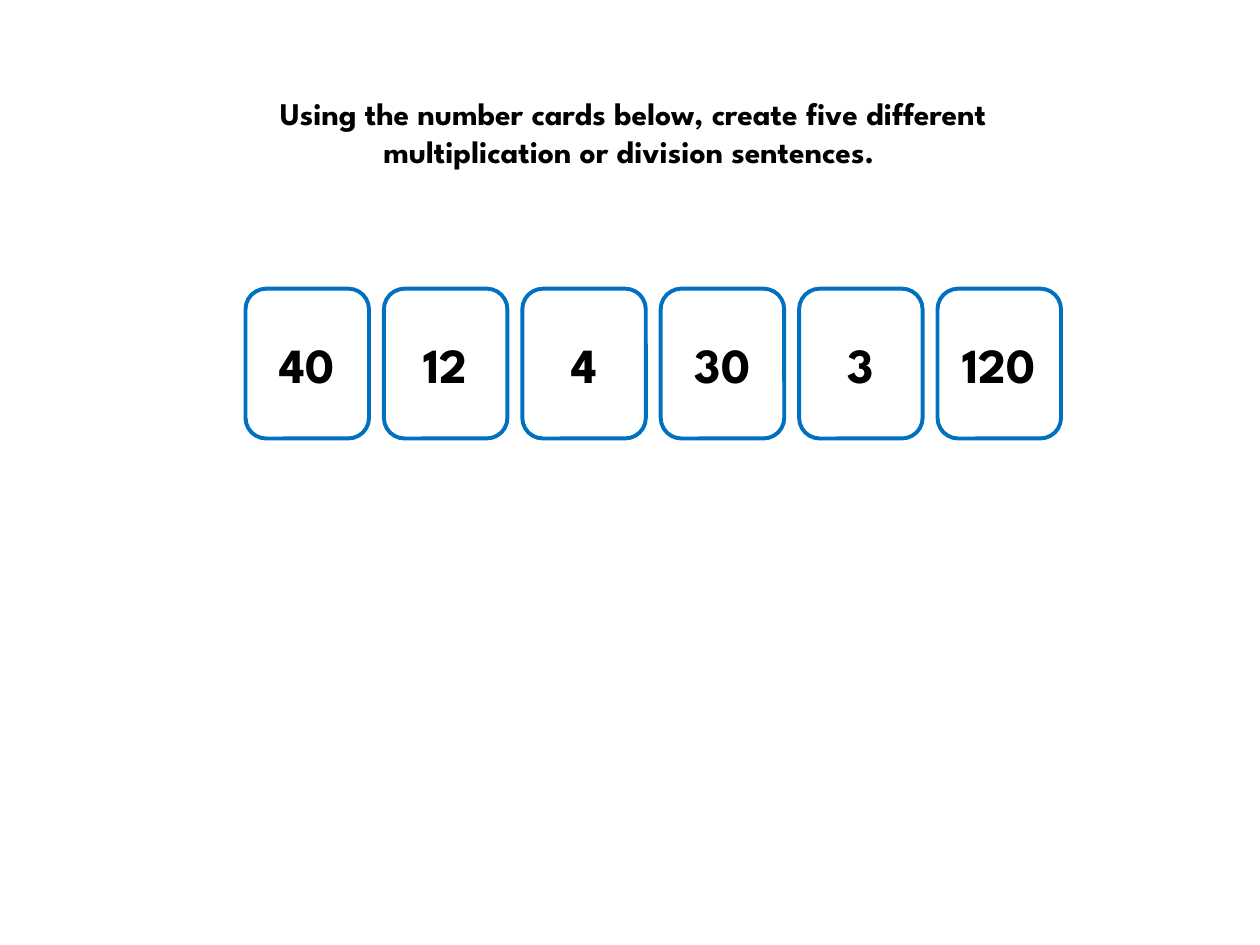
from dataclasses import dataclass

from pptx import Presentation
from pptx.dml.color import RGBColor
from pptx.enum.shapes import MSO_SHAPE
from pptx.enum.text import MSO_ANCHOR, PP_ALIGN
from pptx.slide import Slide
from pptx.text.text import TextFrame
from pptx.util import Cm, Pt

ROUNDED = MSO_SHAPE.ROUNDED_RECTANGLE
MIDDLE = MSO_ANCHOR.MIDDLE
CENTER = PP_ALIGN.CENTER


@dataclass(frozen=True)
class Theme:
    font: str = "League Spartan"
    ink: RGBColor = RGBColor(0, 0, 0)
    paper: RGBColor = RGBColor(255, 255, 255)
    border: RGBColor = RGBColor(0x00, 0x70, 0xC0)
    border_width: Pt = Pt(2.25)
    prompt_size: Pt = Pt(18)
    card_size: Pt = Pt(28)


@dataclass(frozen=True)
class Box:
    left: Cm
    top: Cm
    width: Cm
    height: Cm


@dataclass(frozen=True)
class NumberCard:
    label: str
    box: Box


THEME = Theme()
PROMPT = (
    "Using the number cards below, create five different "
    "multiplication or division sentences. "
)
PROMPT_BOX = Box(Cm(3.86), Cm(1.78), Cm(17.81), Cm(1.8))
NUMBERS = ("40", "12", "4", "30", "3", "120")
FIRST_LEFT, CARD_PITCH = 4.95, 2.79
CARDS = [
    NumberCard(n, Box(Cm(FIRST_LEFT + i * CARD_PITCH), Cm(5.82), Cm(2.49), Cm(3.02)))
    for i, n in enumerate(NUMBERS)
]


def set_text(tf: TextFrame, text: str, size: Pt) -> None:
    tf.word_wrap = True
    tf.text = text
    p = tf.paragraphs[0]
    p.alignment = CENTER
    font = p.runs[0].font
    font.name = THEME.font
    font.size = size
    font.bold = True
    font.color.rgb = THEME.ink


def add_prompt(s: Slide, text: str, box: Box) -> None:
    sp = s.shapes.add_textbox(box.left, box.top, box.width, box.height)
    set_text(sp.text_frame, text, THEME.prompt_size)


def add_card(s: Slide, card: NumberCard) -> None:
    box = card.box
    sp = s.shapes.add_shape(ROUNDED, box.left, box.top, box.width, box.height)
    sp.shadow.inherit = False
    sp.fill.solid()
    sp.fill.fore_color.rgb = THEME.paper
    sp.line.color.rgb = THEME.border
    sp.line.width = THEME.border_width
    sp.text_frame.vertical_anchor = MIDDLE
    set_text(sp.text_frame, card.label, THEME.card_size)


def main() -> None:
    prs = Presentation()
    prs.slide_width, prs.slide_height = Cm(25.4), Cm(19.05)
    s = prs.slides.add_slide(prs.slide_layouts[6])
    for card in CARDS:
        add_card(s, card)
    add_prompt(s, PROMPT, PROMPT_BOX)
    prs.save("out.pptx")


if __name__ == "__main__":
    main()
